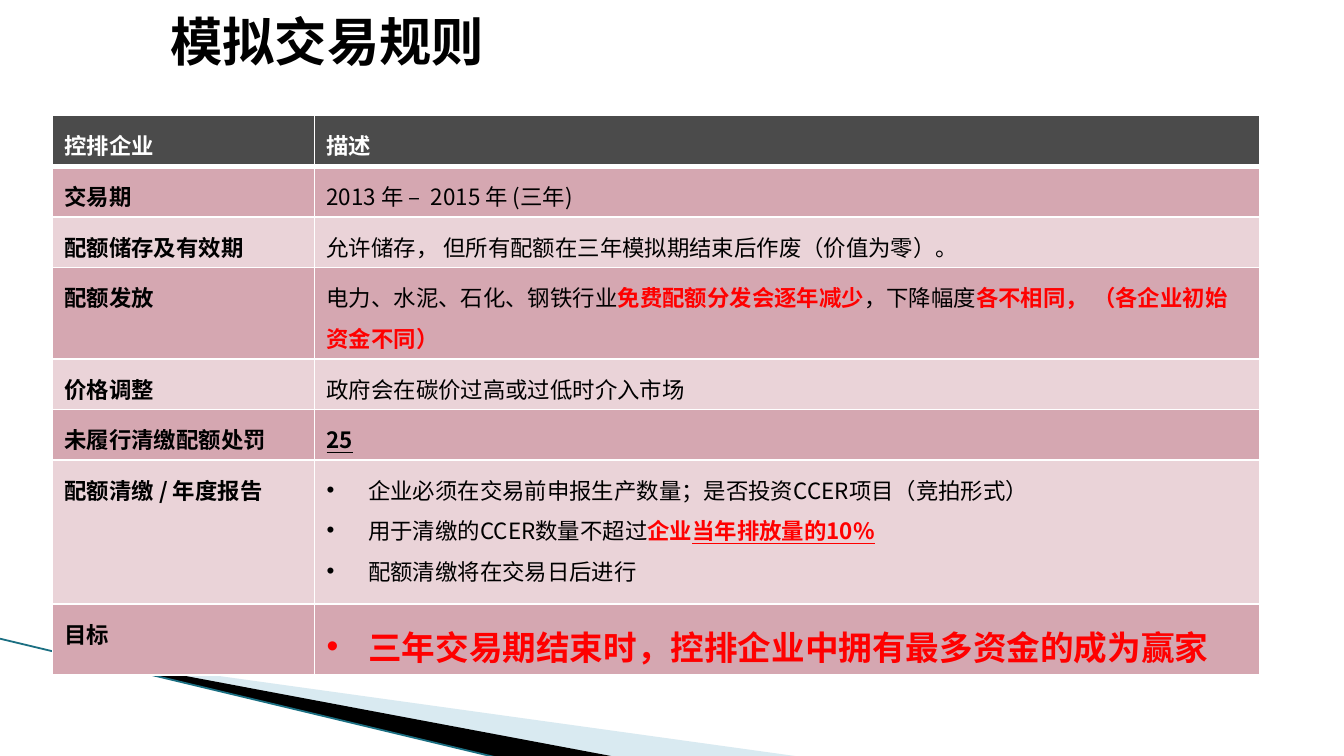
from dataclasses import dataclass

from lxml.etree import SubElement
from pptx import Presentation
from pptx.dml.color import RGBColor
from pptx.enum.text import MSO_AUTO_SIZE
from pptx.oxml.ns import qn
from pptx.util import Inches, Pt


@dataclass(frozen=True)
class Theme:
    white: str = "FFFFFF"
    black: str = "000000"
    red: str = "FF0000"
    header: str = "4B4B4B"
    bands: tuple = ("D5A7B1", "EAD3D8")
    wedge: str = "A0CBDC"
    edge: str = "1B6F82"
    title_font: str = "Arial"
    body_font: str = "Noto Sans CJK SC"
    title_size: float = 28
    goal_size: float = 18
    body_size: float = 12


THEME = Theme()

BOLD = {"bold": True}
RED = {"bold": True, "color": THEME.red}
RED_UNDERLINED = {**RED, "underline": True}
GOAL = {**RED, "size": THEME.goal_size}

RULES = [
    ("交易期", [[("2013 年 –  2015 年 (三年)", {})]]),
    ("配额储存及有效期", [[("允许储存， 但所有配额在三年模拟期结束后作废（价值为零）。", {})]]),
    ("配额发放", [[
        ("电力、水泥、石化、钢铁行业", {}),
        ("免费配额分发会逐年减少", RED),
        ("，下降幅度", {}),
        ("各不相同， （各企业初始资金不同）", RED),
    ]]),
    ("价格调整", [[("政府会在碳价过高或过低时介入市场", {})]]),
    ("未履行清缴配额处罚", [[("25", {"bold": True, "underline": True})]]),
    ("配额清缴 / 年度报告", [
        [("企业必须在交易前申报生产数量；是否投资CCER项目（竞拍形式）", {})],
        [("用于清缴的CCER数量不超过", {}), ("企业", RED), ("当年排放量的10%", RED_UNDERLINED)],
        [("配额清缴将在交易日后进行", {})],
    ]),
    ("目标", [[("三年交易期结束时，控排企业中拥有最多资金的成为赢家", GOAL)]]),
]
BULLETED = {"配额清缴 / 年度报告", "目标"}
COLUMN_WIDTHS = (1.95, 7.03)
ROW_HEIGHTS = (0.32, 0.32, 0.32, 0.57, 0.32, 0.32, 1.07, 0.45)


def rgb(color):
    return RGBColor.from_string(color)


def add_run(paragraph, text, color=THEME.black, size=THEME.body_size,
            face=THEME.body_font, bold=False, underline=False):
    run = paragraph.add_run()
    run.text = text
    settings = {"name": face, "size": Pt(size), "bold": bold, "underline": underline}
    for attribute, value in settings.items():
        setattr(run.font, attribute, value)
    run.font.color.rgb = rgb(color)
    SubElement(run.font._element, qn("a:ea"), typeface=THEME.body_font)


def add_bullet(paragraph):
    properties = paragraph._p.get_or_add_pPr()
    properties.set("marL", str(Inches(0.31)))
    properties.set("indent", str(-Inches(0.31)))
    SubElement(properties, qn("a:buFont"), typeface="Arial")
    SubElement(properties, qn("a:buChar"), char="•")


def set_borders(cell, widths):
    properties = cell._tc.get_or_add_tcPr()
    for side, width in zip("LRTB", widths):
        border = SubElement(properties, qn(f"a:ln{side}"), w=str(Pt(width)))
        fill = SubElement(border, qn("a:solidFill"))
        SubElement(fill, qn("a:srgbClr"), val=THEME.white)


def fill_cell(cell, paragraphs, fill, borders, bulleted=False):
    set_borders(cell, borders)
    cell.fill.solid()
    cell.fill.fore_color.rgb = rgb(fill)
    side, edge = Inches(0.09), Inches(0.05 * 3 / 4)
    margins = {"margin_left": side, "margin_right": side,
               "margin_top": edge, "margin_bottom": edge}
    for attribute, value in margins.items():
        setattr(cell, attribute, value)
    frame = cell.text_frame
    for index, runs in enumerate(paragraphs):
        paragraph = frame.add_paragraph() if index else frame.paragraphs[0]
        paragraph.line_spacing = 1.25
        if bulleted:
            add_bullet(paragraph)
        for text, style in runs:
            add_run(paragraph, text, **style)


def add_wedge(slide, points, color, opacity=None):
    corners = [(Inches(x), Inches(y)) for x, y in points]
    builder = slide.shapes.build_freeform(*corners[0])
    builder.add_line_segments(corners[1:])
    wedge = builder.convert_to_shape()
    wedge.shadow.inherit = False
    wedge.fill.solid()
    wedge.fill.fore_color.rgb = rgb(color)
    wedge.line.fill.background()
    if opacity is not None:
        tone = wedge._element.spPr.find(f".//{qn('a:srgbClr')}")
        SubElement(tone, qn("a:alpha"), val=str(opacity * 1000))


def add_corner_decoration(slide, left, top):
    def place(*offsets):
        return [(left + x, top + y) for x, y in offsets]

    add_wedge(slide, place((0.56, 0.13), (5.96, 0.88), (4.57, 0.88)), THEME.wedge, 40)
    add_wedge(slide, place((0.54, 0.12), (4.58, 0.88), (3.73, 0.89), (0.55, 0.13)), THEME.black)
    start, end = place((0, 0), (3.72, 0.89))
    edge = slide.shapes.add_connector(1, *map(Inches, start + end))
    edge.line.color.rgb = rgb(THEME.edge)
    edge.line.width = Pt(0.95)
    SubElement(edge._element.spPr, qn("a:effectLst"))


def add_rules_table(slide, left, top):
    box = map(Inches, (left, top, sum(COLUMN_WIDTHS), sum(ROW_HEIGHTS)))
    table = slide.shapes.add_table(len(ROW_HEIGHTS), len(COLUMN_WIDTHS), *box).table
    for column, width in zip(table.columns, COLUMN_WIDTHS):
        column.width = Inches(width)
    for row, height in zip(table.rows, ROW_HEIGHTS):
        row.height = Inches(height)
    heading = {"bold": True, "color": THEME.white}
    for column, text in enumerate(("控排企业", "描述")):
        fill_cell(table.cell(0, column), [[(text, heading)]], THEME.header, (1, 1, 1, 3))
    for index, (topic, description) in enumerate(RULES):
        fill = THEME.bands[index % 2]
        borders = (1, 1, 1 if index else 3, 1)
        fill_cell(table.cell(index + 1, 0), [[(topic, BOLD)]], fill, borders)
        fill_cell(table.cell(index + 1, 1), description, fill, borders, topic in BULLETED)


def add_title(slide, left, top, width, height):
    title = slide.shapes.add_textbox(*map(Inches, (left, top, width, height)))
    frame = title.text_frame
    frame.word_wrap = True
    frame.auto_size = MSO_AUTO_SIZE.SHAPE_TO_FIT_TEXT
    add_run(frame.paragraphs[0], "模拟交易规则", size=THEME.title_size,
            face=THEME.title_font, bold=True)


def main():
    presentation = Presentation()
    presentation.slide_width = Inches(10)
    presentation.slide_height = Inches(10 * 9 / 16)
    slide = presentation.slides.add_slide(presentation.slide_layouts[6])
    add_corner_decoration(slide, -0.01, 4.75)
    add_rules_table(slide, 0.39, 0.86)
    add_title(slide, 1.17, 0.02, 3.33, 0.57)
    presentation.save("out.pptx")


if __name__ == "__main__":
    main()
